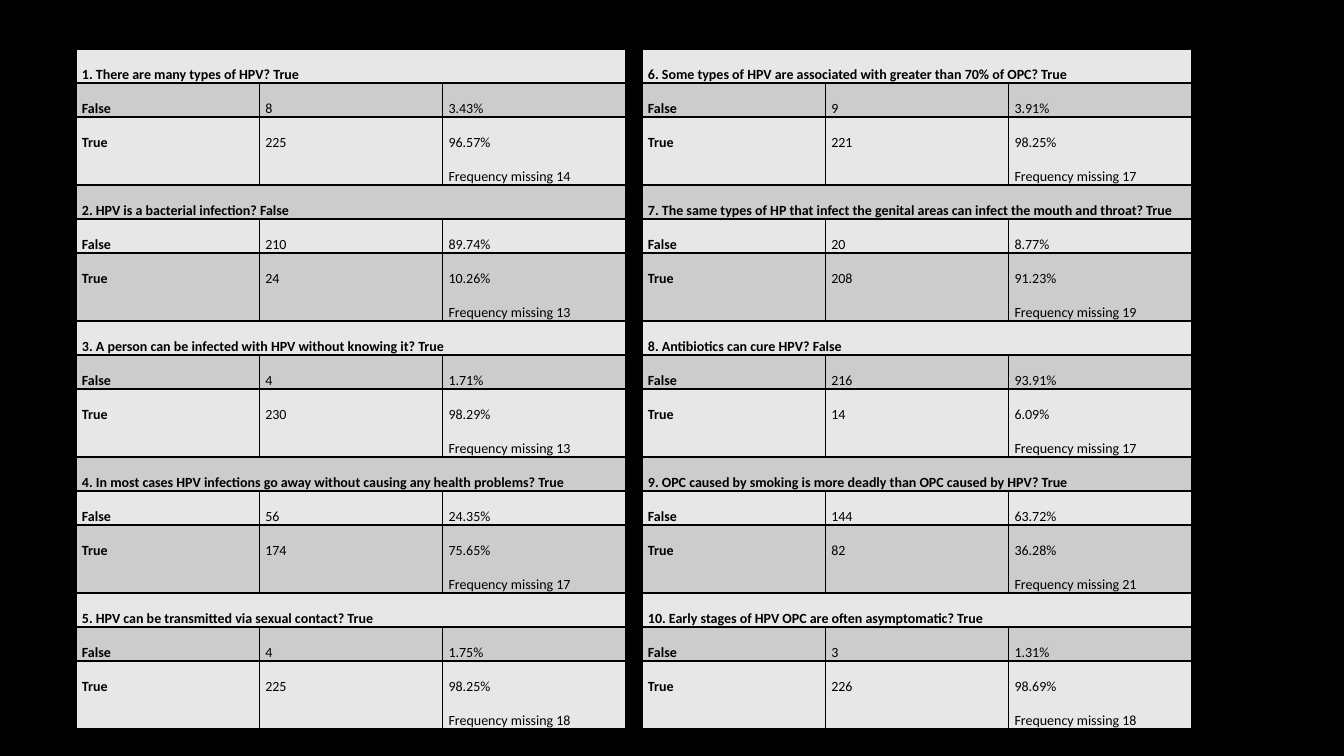
from lxml import etree
from pptx import Presentation
from pptx.dml.color import RGBColor
from pptx.oxml import parse_xml
from pptx.oxml.ns import nsdecls
from pptx.util import Pt

SCALE = 12192000 / 1344
BLACK, LIGHT, DARK = "000000", "E7E7E7", "CCCCCC"
ROW_HEIGHTS = (29, 29, 63)  # question, false, true

# question, (false count, share), (true count, share), missing
LEFT_QUESTIONS = [
    ("1. There are many types of HPV? True", ("8", "3.43%"), ("225", "96.57%"), 14),
    ("2. HPV is a bacterial infection? False", ("210", "89.74%"), ("24", "10.26%"), 13),
    ("3. A person can be infected with HPV without knowing it? True",
     ("4", "1.71%"), ("230", "98.29%"), 13),
    ("4. In most cases HPV infections go away without causing any health problems? True",
     ("56", "24.35%"), ("174", "75.65%"), 17),
    ("5. HPV can be transmitted via sexual contact? True",
     ("4", "1.75%"), ("225", "98.25%"), 18),
]
RIGHT_QUESTIONS = [
    ("6. Some types of HPV are associated with greater than 70% of OPC? True",
     ("9", "3.91%"), ("221", "98.25%"), 17),
    ("7. The same types of HP that infect the genital areas can infect the mouth and throat? True",
     ("20", "8.77%"), ("208", "91.23%"), 19),
    ("8. Antibiotics can cure HPV? False", ("216", "93.91%"), ("14", "6.09%"), 17),
    ("9. OPC caused by smoking is more deadly than OPC caused by HPV? True",
     ("144", "63.72%"), ("82", "36.28%"), 21),
    ("10. Early stages of HPV OPC are often asymptomatic? True",
     ("3", "1.31%"), ("226", "98.69%"), 18),
]


def px(n):
    return round(n * SCALE)


def rgb(color):
    return RGBColor.from_string(color)


def add_borders(cell):
    tcPr = cell._tc.get_or_add_tcPr()
    for i, side in enumerate(("lnL", "lnR", "lnT", "lnB")):
        ln = parse_xml(f'<a:{side} {nsdecls("a")} w="{Pt(1)}"/>')
        fill = etree.SubElement(ln, ln.tag.replace(side, "solidFill"))
        etree.SubElement(fill, ln.tag.replace(side, "srgbClr"), val=BLACK)
        tcPr.insert(i, ln)


def format_cell(cell, text, color, bold):
    cell.margin_left = cell.margin_right = px(6)
    cell.margin_top = cell.margin_bottom = 0
    cell.fill.solid()
    cell.fill.fore_color.rgb = rgb(color)
    add_borders(cell)
    tf = cell.text_frame
    tf.text = text
    for p in tf.paragraphs:
        p.line_spacing = 2.0
        p.font.size = Pt(10)
        for r in p.runs:
            r.font.name = "Calibri"
            r.font.size = Pt(10)
            r.font.bold = bold
            r.font.color.rgb = rgb(BLACK)


def add_question_table(slide, questions, x, y, w):
    rows = []
    for question, false, true, missing in questions:
        count, share = true
        rows += [(question, "", ""), ("False", *false),
                 ("True", count, f"{share}\nFrequency missing {missing}")]
    h = sum(ROW_HEIGHTS) * len(questions)
    table = slide.shapes.add_table(len(rows), 3, px(x), px(y), px(w), px(h)).table
    table.first_row = table.horz_banding = False
    for i, row in enumerate(rows):
        kind = i % len(ROW_HEIGHTS)
        table.rows[i].height = px(ROW_HEIGHTS[kind])
        for j, text in enumerate(row):
            format_cell(table.cell(i, j), text, DARK if i % 2 else LIGHT, j == 0)
        if kind == 0:
            table.cell(i, 0).merge(table.cell(i, 2))


def main():
    prs = Presentation()
    prs.slide_width, prs.slide_height = px(1344), px(756)
    slide = prs.slides.add_slide(prs.slide_layouts[6])
    slide.background.fill.solid()
    slide.background.fill.fore_color.rgb = rgb(BLACK)
    for x, questions in ((76, LEFT_QUESTIONS), (642, RIGHT_QUESTIONS)):
        add_question_table(slide, questions, x, 49, 550)
    prs.save("out.pptx")


if __name__ == "__main__":
    main()
